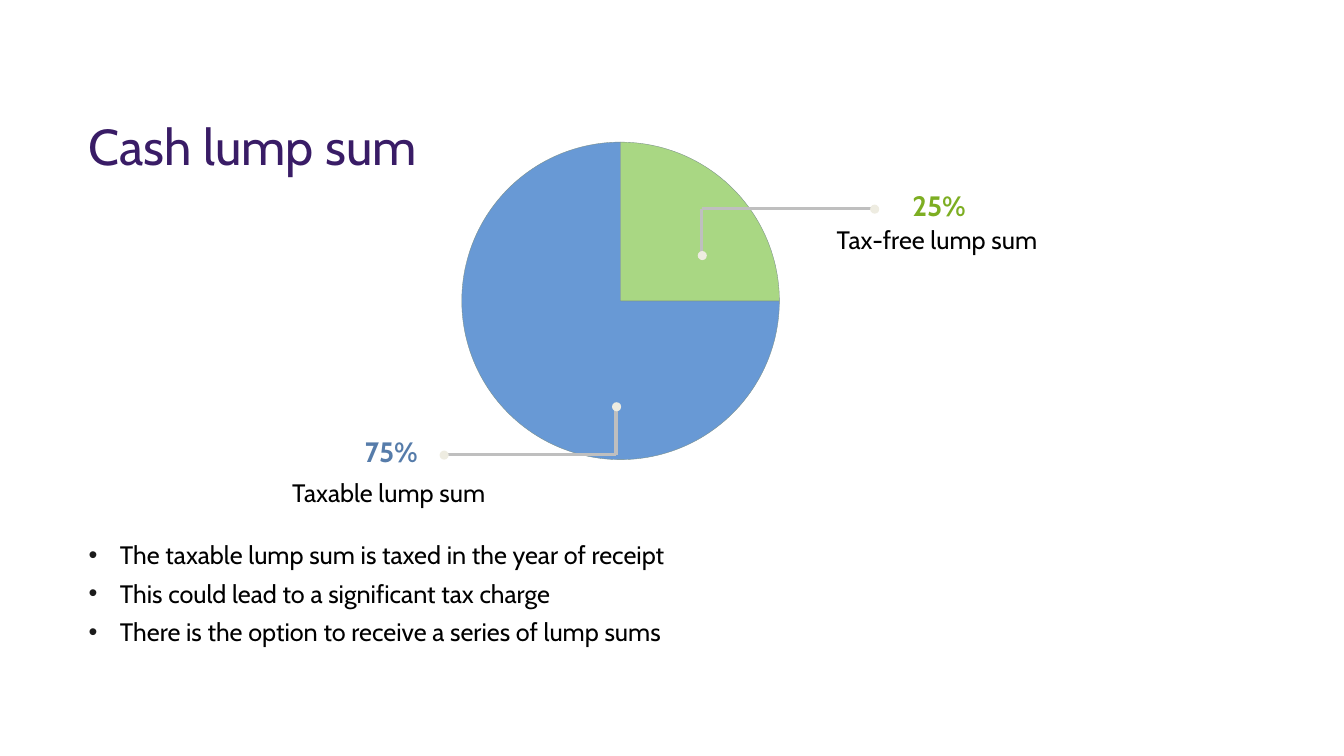
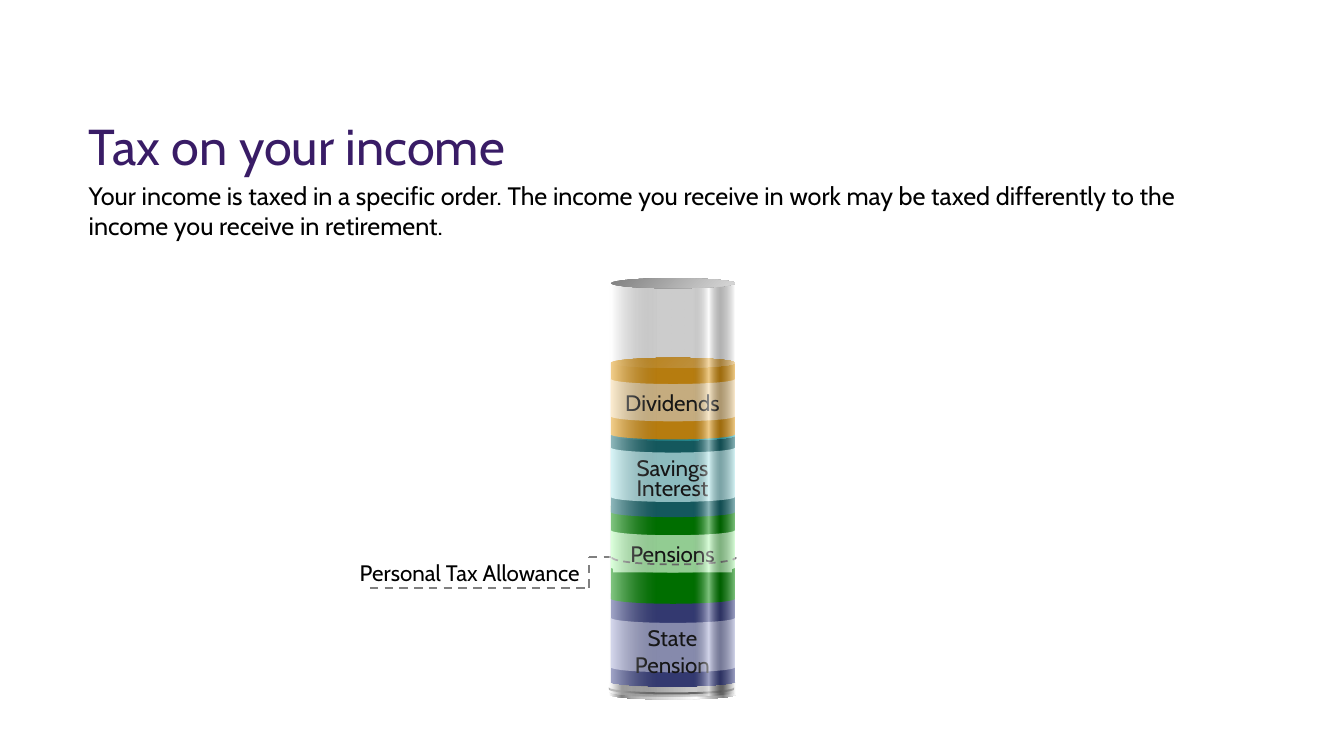
from dataclasses import dataclass
from math import cos, pi, sin

from lxml.etree import SubElement
from pptx import Presentation
from pptx.dml.color import RGBColor
from pptx.enum.dml import MSO_LINE as Dash
from pptx.enum.shapes import MSO_CONNECTOR as Connector, MSO_SHAPE as Preset
from pptx.enum.text import MSO_ANCHOR as Anchor, PP_ALIGN as Align
from pptx.oxml.ns import qn
from pptx.util import Pt

PX = 9144


@dataclass(frozen=True)
class Theme:
    font: str = "Cabin"
    title_size: int = 36
    figure_size: int = 20
    body_size: int = 18
    label_size: int = 16
    title: str = "391C66"
    body: str = "000000"
    label: str = "1B1B1B"
    blue: str = "6899D5"
    green: str = "A9D783"
    pie_edge: str = "7A8F8A"
    blue_figure: str = "567CAA"
    green_figure: str = "7DAE22"
    leader: str = "BFBFBF"
    dot: str = "EEECE1"
    grey: str = "808080"
    light_grey: str = "D9D9D9"


@dataclass(frozen=True)
class Layer:
    lines: tuple
    top: int
    bottom: int
    band_top: int
    band_bottom: int
    label_top: int
    color: str
    lid: str
    band: str
    pitch: float = None
    filled: bool = False


THEME = Theme()
LEFT, CONTENT_WIDTH = 88, 1158
JAR_LEFT, JAR_WIDTH, SAG = 606, 123, 5
BODY_INSETS = (0, 5, 10, 5)
LABEL_INSETS = (9, 4, 9, 4)

LAYERS = (
    Layer(("State", "Pension"), 589, 681, 613, 662, 615, "40488D", "0066CC", "A8ADD8"),
    Layer(("Pensions",), 502, 594, 526, 563, 532, "008A00", "33FF33", "B7FFB7", filled=True),
    Layer(("Savings", "Interest"), 432, 508, 444, 493, 453, "196E75", "38C9D4", "B0EAEE", 14.4),
    Layer(("Dividends",), 360, 431, 376, 413, 382, "E49B13", "F2BF64", "F7D89F"),
)
RIM_STOPS = ((0, "FFFFFF"), (10, "808080"), (18, "AAAAAA"), (26, "BFBFBF"),
             (69, "FFFFFF"), (90, "808080"), (100, "FFFFFF"))
GLASS_STOPS = ((0, "FFFFFF", 50), (2, "FFFFFF", 50), (38, "000000", 20), (67, "000000", 20),
               (79, "FFFFFF", 50), (88, "000000", 30), (100, "FFFFFF", 50))


def emu(*lengths):
    return [round(length * PX) for length in lengths]


def sagging(left, width, y, sag, steps=32):
    angles = [pi * step / steps for step in range(steps + 1)]
    return [(left + width * (1 - cos(angle)) / 2, y + sag * sin(angle)) for angle in angles]


class Deck:
    def __init__(self, theme):
        self.theme = theme
        self.presentation = Presentation()
        self.presentation.slide_width, self.presentation.slide_height = emu(1333, 750)
        self.slide = None

    def new_slide(self, title):
        self.slide = self.presentation.slides.add_slide(self.presentation.slide_layouts[6])
        self.text((LEFT, 116, CONTENT_WIDTH, 57), [title], self.theme.title_size,
                  self.theme.title, insets=(0, 0, 0, 0), anchor=Anchor.MIDDLE)

    def text(self, box, lines, size, color, bold=False, align=Align.LEFT, anchor=Anchor.TOP,
             insets=(10, 5, 10, 5), after=0, pitch=None, bullets=False, fill=None):
        shape = self.slide.shapes.add_textbox(*emu(*box))
        if fill:
            self.paint(shape, fill)
        frame = shape.text_frame
        left, top, right, bottom = emu(*insets)
        frame_format = {"word_wrap": True, "vertical_anchor": anchor, "margin_left": left,
                        "margin_top": top, "margin_right": right, "margin_bottom": bottom}
        paragraph_format = {"alignment": align, "space_after": Pt(after),
                            "line_spacing": Pt(pitch) if pitch else None}
        font_format = {"name": self.theme.font, "size": Pt(size), "bold": bold}
        self.apply(frame, frame_format)
        for index, line in enumerate(lines):
            paragraph = frame.add_paragraph() if index else frame.paragraphs[0]
            self.apply(paragraph, paragraph_format)
            if bullets:
                self.bullet(paragraph)
            run = paragraph.add_run()
            run.text = line
            self.apply(run.font, font_format)
            run.font.color.rgb = RGBColor.from_string(color)

    def bullet(self, paragraph):
        properties = paragraph._p.get_or_add_pPr()
        indent, = emu(31)
        properties.set("marL", str(indent))
        properties.set("indent", str(-indent))
        color = SubElement(properties, qn("a:buClr"))
        SubElement(color, qn("a:srgbClr"), val=self.theme.label)
        SubElement(properties, qn("a:buFont"), typeface="Arial")
        SubElement(properties, qn("a:buChar"), char="•")

    def preset(self, kind, box, fill, angles=(), edge=None):
        shape = self.slide.shapes.add_shape(kind, *emu(*box))
        for index, angle in enumerate(angles):
            shape.adjustments[index] = angle * 0.6
        self.paint(shape, fill, edge, 0.25)

    def outline(self, points, fill=None, edge=None, width=1.25, closed=True, dash=None):
        first, *rest = [emu(*point) for point in points]
        builder = self.slide.shapes.build_freeform(*first, scale=1.0)
        builder.add_line_segments(rest, close=closed)
        self.paint(builder.convert_to_shape(), fill, edge, width, dash)

    def band(self, left, width, top, bottom, fill, top_sag=SAG, bottom_sag=SAG):
        upper = sagging(left, width, top, top_sag)
        lower = sagging(left, width, bottom, bottom_sag)
        self.outline(upper + lower[::-1], fill)

    def line(self, start, end, color, width, dash=None):
        connector = self.slide.shapes.add_connector(Connector.STRAIGHT, *emu(*start, *end))
        SubElement(connector._element.spPr, qn("a:effectLst"))
        self.stroke(connector.line, color, width, dash)

    def callout(self, start, end):
        corner = (start[0], end[1])
        for first, second in ((start, corner), (corner, end)):
            self.line(first, second, self.theme.leader, 2.25)
        for x, y in (start, end):
            self.preset(Preset.OVAL, (x - 4, y - 4, 9, 9), self.theme.dot)

    def paint(self, shape, fill, edge=None, width=1, dash=None):
        shape.shadow.inherit = False
        if isinstance(fill, str):
            shape.fill.solid()
            shape.fill.fore_color.rgb = RGBColor.from_string(fill)
        else:
            shape.fill.background()
            if fill:
                self.gradient(shape, *fill)
        if edge:
            self.stroke(shape.line, edge, width, dash)
        else:
            shape.line.fill.background()

    @staticmethod
    def gradient(shape, stops, angle):
        properties = shape._element.spPr
        gradient = SubElement(properties, qn("a:gradFill"), rotWithShape="1")
        stop_list = SubElement(gradient, qn("a:gsLst"))
        for position, color, *opacity in stops:
            stop = SubElement(stop_list, qn("a:gs"), pos=str(position * 1000))
            tint = SubElement(stop, qn("a:srgbClr"), val=color)
            for percent in opacity:
                SubElement(tint, qn("a:alpha"), val=str(percent * 1000))
        SubElement(gradient, qn("a:lin"), ang=str(angle * 60000), scaled="0")
        properties.replace(properties.find(qn("a:noFill")), gradient)

    @staticmethod
    def stroke(line, color, width, dash=None):
        line.color.rgb = RGBColor.from_string(color)
        line.width = Pt(width)
        if dash:
            line.dash_style = dash

    @staticmethod
    def apply(target, formats):
        for name, value in formats.items():
            setattr(target, name, value)

    def lid(self, top, dark, light):
        self.preset(Preset.OVAL, (JAR_LEFT, top, JAR_WIDTH, 2 * SAG),
                    (((0, dark), (100, light)), 45))

    def layer(self, layer):
        self.band(JAR_LEFT, JAR_WIDTH, layer.top, layer.bottom, layer.color, top_sag=0)
        self.lid(layer.top - SAG, layer.color, layer.lid)
        self.band(JAR_LEFT, JAR_WIDTH, layer.band_top, layer.band_bottom, layer.band)
        self.text((JAR_LEFT + 2, layer.label_top, 118, 36 if len(layer.lines) == 1 else 63),
                  layer.lines, self.theme.label_size, self.theme.label, align=Align.CENTER,
                  insets=LABEL_INSETS, pitch=layer.pitch,
                  fill=layer.band if layer.filled else None)


def lump_sum_slide(deck):
    theme = deck.theme
    deck.new_slide("Cash lump sum")
    pie = (458, 141, 315, 315)
    for color, angles in ((theme.blue, (0, 270)), (theme.green, (270, 0))):
        deck.preset(Preset.PIE, pie, color, angles, theme.pie_edge)
    deck.callout((696, 253), (867, 207))
    deck.callout((611, 403), (440, 451))
    for figure, caption, color, figure_at, caption_at in (
        ("25%", "Tax-free lump sum", theme.green_figure, (895, 182), (820, 218)),
        ("75%", "Taxable lump sum", theme.blue_figure, (352, 426), (280, 469)),
    ):
        deck.text((*figure_at, 76, 44), [figure], theme.figure_size, color, bold=True)
        deck.text((*caption_at, 231, 40), [caption], theme.body_size, theme.body)
    deck.text((LEFT, 530, 841, 118),
              ["The taxable lump sum is taxed in the year of receipt",
               "This could lead to a significant tax charge",
               "There is the option to receive a series of lump sums"],
              theme.body_size, theme.body, insets=BODY_INSETS, after=6, bullets=True)


def income_tax_slide(deck):
    theme = deck.theme
    deck.new_slide("Tax on your income")
    deck.text((LEFT, 174, CONTENT_WIDTH, 71),
              ["Your income is taxed in a specific order. The income you receive in work may be "
               "taxed differently to the income you receive in retirement."],
              theme.body_size, theme.body, insets=BODY_INSETS, after=4)
    for layer in LAYERS:
        deck.layer(layer)
    deck.band(604, 126, 677, 689, (RIM_STOPS, 0))
    deck.band(604, 124, 682, 684, theme.grey)
    deck.text((312, 551, 272, 36), ["Personal Tax Allowance"], theme.label_size, theme.body,
              align=Align.RIGHT, insets=LABEL_INSETS)
    allowance = ((367, 583), (584, 583), (584, 553), (JAR_LEFT, 553))
    for start, end in zip(allowance, allowance[1:]):
        deck.line(start, end, theme.grey, 1.5, Dash.DASH)
    deck.outline(sagging(JAR_LEFT + 1, JAR_WIDTH, 553, 7), edge=theme.grey, closed=False,
                 dash=Dash.DASH)
    deck.band(JAR_LEFT - 1, JAR_WIDTH, 283, 686, (GLASS_STOPS, 0), top_sag=0)
    deck.lid(276, theme.grey, theme.light_grey)


def main():
    deck = Deck(THEME)
    lump_sum_slide(deck)
    income_tax_slide(deck)
    deck.presentation.save("out.pptx")


if __name__ == "__main__":
    main()
